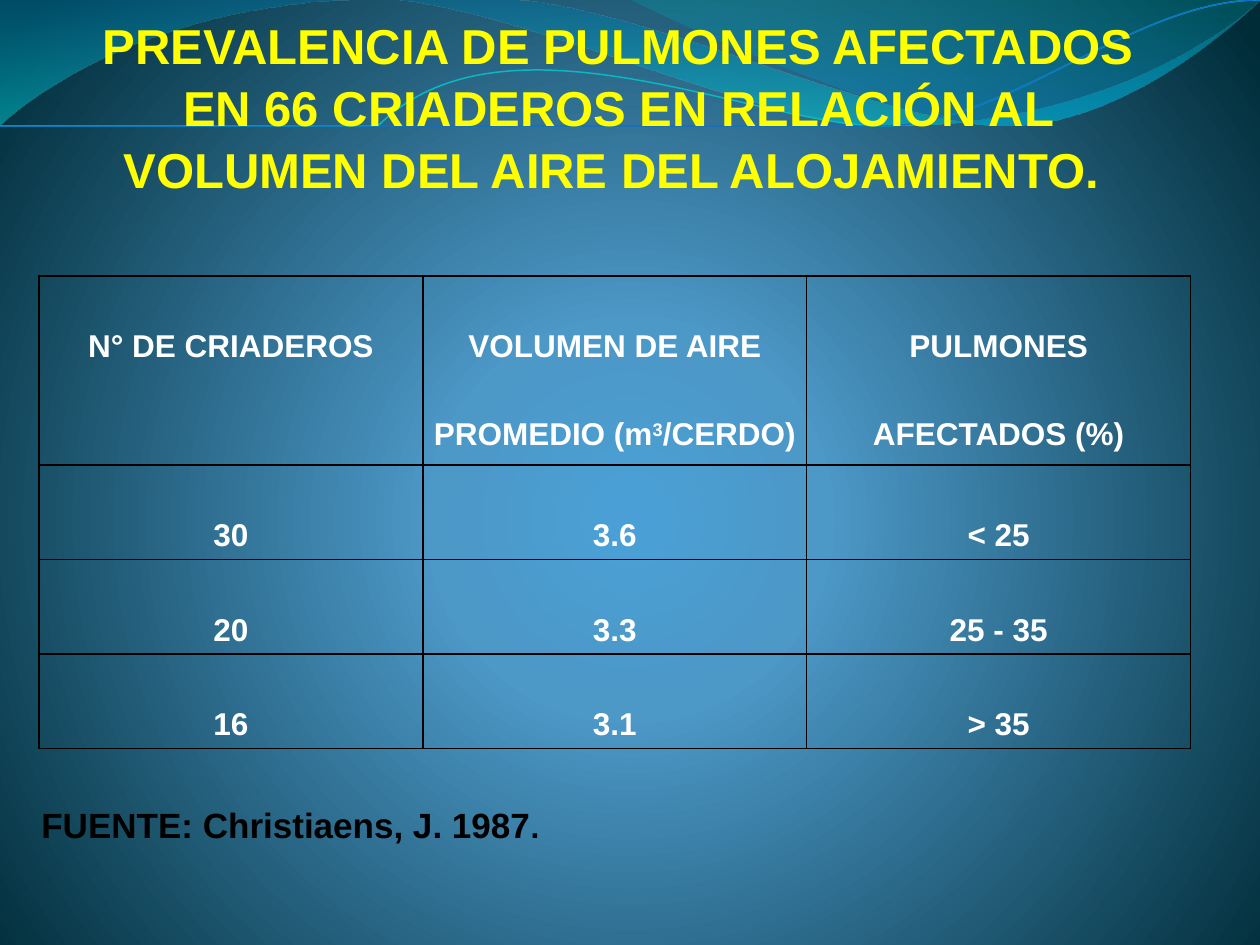
from itertools import product

from lxml.etree import SubElement
from pptx import Presentation
from pptx.dml.color import RGBColor
from pptx.enum.text import MSO_ANCHOR, PP_ALIGN
from pptx.oxml.ns import qn
from pptx.util import Inches, Pt

WIDTH, HEIGHT = 10, 7.5
ROWS = [
    ["N° DE CRIADEROS", "VOLUMEN DE AIRE PROMEDIO (m^3^/CERDO)", "PULMONES AFECTADOS (%)"],
    ["30", "3.6", "< 25"],
    ["20", "3.3", "25 - 35"],
    ["16", "3.1", "> 35"],
]
BANDS = [
    {
        "start": (0, 0),
        "steps": [
            (4.4, -0.01),
            (4.76, 0.17, 6.64, 0.63, 7.58, 0.63),
            (8.53, 0.63, 9.58, 0.26, 10, 0.09),
            (10.01, 0.36),
            (9.83, 0.44, 8.7, 0.76, 7.46, 0.75),
            (6.22, 0.75, 3.82, 0.28, 2.57, 0.34),
            (1.29, 0.36, 0.46, 0.83, -0.01, 1.13),
        ],
        "stops": [(0, "0074A1", 45), (100, "00C6CF", 55)],
    },
    {
        "start": (4.79, -0.01),
        "steps": [
            (5.09, 0.11, 6.82, 0.62, 7.69, 0.65),
            (8.56, 0.69, 9.61, 0.32, 10, 0.21),
            (10, 0),
        ],
        "stops": [(0, "00A1A9", 30), (80, "008BBF", 45)],
    },
]
STRANDS = [
    {
        "start": (0, 1.11),
        "steps": [
            (0.48, 0.93, 1.58, 0.57, 2.77, 0.52),
            (3.95, 0.47, 5.93, 0.89, 7.13, 0.8),
            (8.33, 0.71, 9.38, 0.15, 9.98, -0.02),
        ],
        "color": "0AB8BF",
        "weight": 0.85,
    },
    {
        "start": (0, 1.04),
        "steps": [
            (0.47, 0.96, 1.64, 0.61, 2.83, 0.56),
            (4.03, 0.51, 5.97, 0.84, 7.17, 0.75),
            (8.36, 0.67, 9.41, 0.21, 10, 0.06),
        ],
        "color": "0F6FC6",
        "weight": 0.75,
    },
]


def rgb(value):
    return RGBColor.from_string(value)


def set_font(font, size, color):
    font.name, font.size, font.bold = "Arial", Pt(size), True
    font.color.rgb = rgb(color)


def set_gradient(fill, element, stops, center=None):
    fill.gradient()
    gradient = element.find(".//" + qn("a:gradFill"))
    for child in list(gradient):
        gradient.remove(child)
    stop_list = SubElement(gradient, qn("a:gsLst"))
    for position, color, opacity in stops:
        stop = SubElement(stop_list, qn("a:gs"), pos=str(position * 1000))
        paint = SubElement(stop, qn("a:srgbClr"), val=color)
        SubElement(paint, qn("a:alpha"), val=str(opacity * 1000))
    if center:
        circle = SubElement(gradient, qn("a:path"), path="circle")
        edges = {side: str(share * 1000) for side, share in zip("ltrb", center)}
        SubElement(circle, qn("a:fillToRect"), **edges)
    else:
        SubElement(gradient, qn("a:lin"), ang="5400000", scaled="1")


def add_curve(page, start, steps, close):
    points = [pair for step in steps for pair in zip(step[::2], step[1::2])]
    builder = page.shapes.build_freeform(*start, scale=Inches(1))
    builder.add_line_segments(points, close=close)
    shape = builder.convert_to_shape()
    shape.shadow.inherit = False
    segments = iter(shape.element.findall(".//" + qn("a:lnTo")))
    for step in steps:
        first = next(segments)
        if len(step) == 6:
            first.tag = qn("a:cubicBezTo")
            for _ in range(2):
                segment = next(segments)
                first.append(segment[0])
                segment.getparent().remove(segment)
    return shape


def add_backdrop(page):
    stops = [(0, "4AA0D6", 100), (25, "4C98C7", 100), (100, "002C38", 100)]
    set_gradient(page.background.fill, page.element, stops, (10, 110, 10, 100))
    for band in BANDS:
        shape = add_curve(page, band["start"], band["steps"], True)
        set_gradient(shape.fill, shape.element, band["stops"])
        shape.line.fill.background()
    for strand in STRANDS:
        shape = add_curve(page, strand["start"], strand["steps"], False)
        shape.fill.background()
        shape.line.color.rgb = rgb(strand["color"])
        shape.line.width = Pt(strand["weight"])


def add_title(page, left, top, width, height):
    box = page.shapes.add_textbox(*map(Inches, (left, top, width, height)))
    frame = box.text_frame
    frame.word_wrap = True
    frame.vertical_anchor = MSO_ANCHOR.BOTTOM
    frame.margin_left = frame.margin_top = 0
    frame.margin_right, frame.margin_bottom = Inches(0.02), Inches(0.45)
    para = frame.paragraphs[0]
    para.text = (
        "PREVALENCIA DE PULMONES AFECTADOS EN 66 CRIADEROS "
        "EN RELACIÓN AL VOLUMEN DEL AIRE DEL ALOJAMIENTO. "
    )
    para.alignment = PP_ALIGN.CENTER
    para.line_spacing = 1.05
    set_font(para.font, 28, "FFFF00")


def add_borders(cell):
    properties = cell._tc.get_or_add_tcPr()
    for index, side in enumerate(("lnL", "lnR", "lnT", "lnB")):
        line = properties.makeelement(qn(f"a:{side}"), {"w": str(Pt(1))})
        paint = SubElement(line, qn("a:solidFill"))
        SubElement(paint, qn("a:srgbClr"), val="000000")
        properties.insert(index, line)


def fill_cell(cell, text):
    cell.fill.background()
    cell.margin_left = cell.margin_right = Inches(0.07)
    cell.margin_top = cell.margin_bottom = 0
    para = cell.text_frame.paragraphs[0]
    para.alignment = PP_ALIGN.CENTER
    para.line_spacing = 2.5
    set_font(para.font, 18, "FFFFFF")
    for index, part in enumerate(text.split("^")):
        span = para.add_run()
        span.text = part
        if index % 2:
            span.font._element.set("baseline", "30000")
    add_borders(cell)


def add_data_table(page, left, top, width, height):
    lengths = map(Inches, (left, top, width, height))
    table = page.shapes.add_table(len(ROWS), len(ROWS[0]), *lengths).table
    table.first_row = table.horz_banding = False
    unit = height / (len(ROWS) + 1)
    for index, row in enumerate(table.rows):
        row.height = Inches(unit if index else 2 * unit)
    for row, column in product(range(len(ROWS)), range(len(ROWS[0]))):
        fill_cell(table.cell(row, column), ROWS[row][column])


def add_reference(page, left, top, width, height):
    box = page.shapes.add_textbox(*map(Inches, (left, top, width, height)))
    box.text_frame.word_wrap = False
    para = box.text_frame.paragraphs[0]
    for text, size in (("FUENTE: Christiaens, J. 1987", 20), (".", 18)):
        span = para.add_run()
        span.text = text
        set_font(span.font, size, "000000")


def main():
    deck = Presentation()
    deck.slide_width, deck.slide_height = Inches(WIDTH), Inches(HEIGHT)
    page = deck.slides.add_slide(deck.slide_layouts[6])
    add_backdrop(page)
    add_title(page, 0.62, 0, 8.59, 2.02)
    add_data_table(page, 0.31, 2.19, 9.14, 3.67)
    add_reference(page, 0.23, 6.33, 4.18, 0.44)
    deck.save("out.pptx")


if __name__ == "__main__":
    main()
